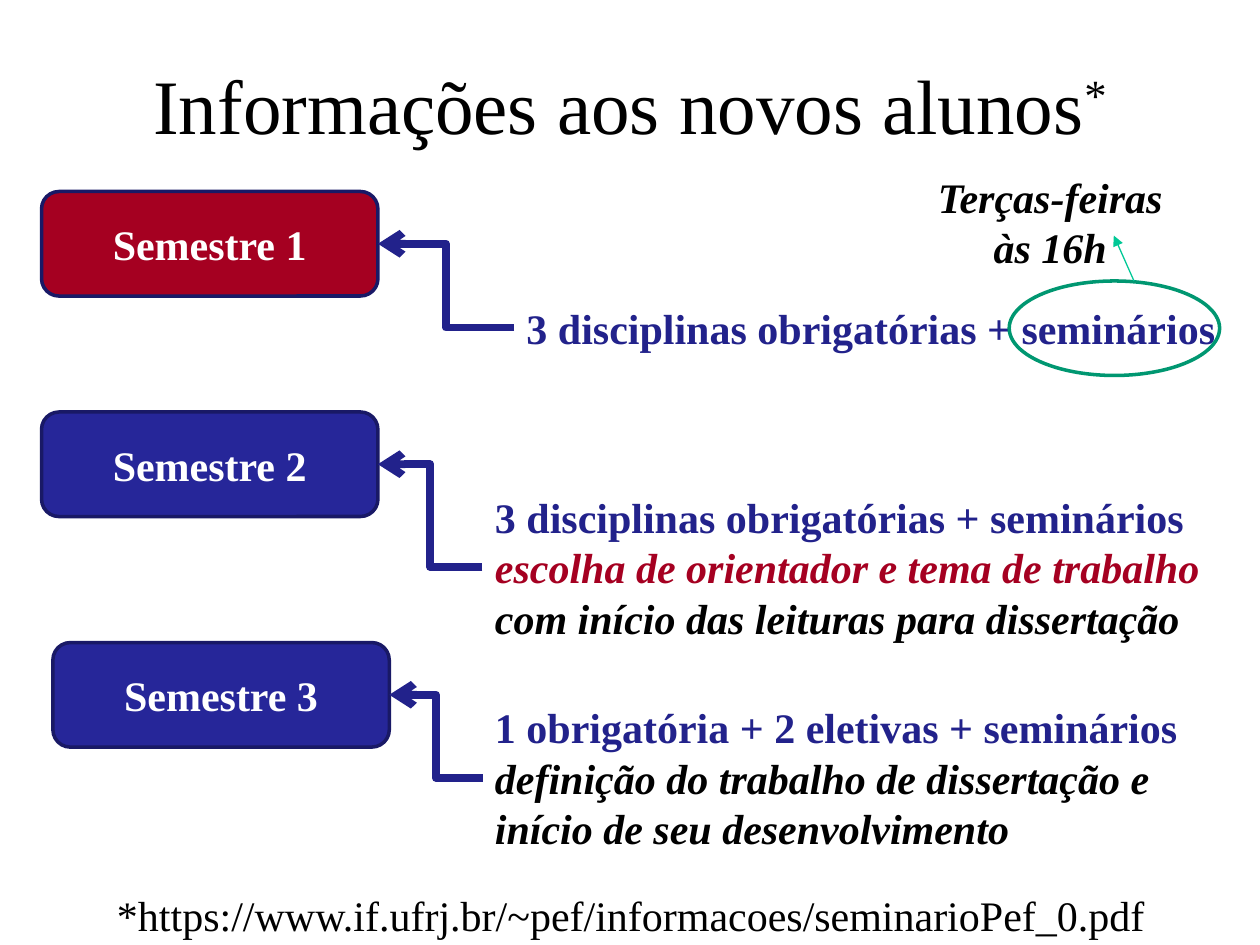
"""Builds the slide on semester requirements for new students."""
from lxml import etree
from pptx import Presentation
from pptx import util as u
from pptx.dml.color import RGBColor
from pptx.enum import shapes, text
from pptx.oxml.ns import qn

PX = 9144
FONT = "Times New Roman"
BLACK = RGBColor(0x00, 0x00, 0x00)
WHITE = RGBColor(0xFF, 0xFF, 0xFF)
RED = RGBColor(0xA5, 0x00, 0x21)
BLUE = RGBColor(0x26, 0x26, 0x99)
NAVY = RGBColor(0x22, 0x22, 0x8B)
BORDER = RGBColor(0x19, 0x19, 0x66)
GREEN = RGBColor(0x00, 0x97, 0x71)
MINT = RGBColor(0x00, 0xC8, 0x96)

PLAIN = {"size": u.Pt(24), "name": FONT, "color": BLACK, "bold": False, "italic": False}
TITLE = PLAIN | {"size": u.Pt(44)}
LABEL = PLAIN | {"color": WHITE, "bold": True}
COURSES = PLAIN | {"color": NAVY, "bold": True}
DETAIL = PLAIN | {"bold": True, "italic": True}
CHOICE = DETAIL | {"color": RED}

HEADING = [[("Informações aos novos alunos", TITLE), ("*", TITLE)]]
SEMESTERS = [
    ("Semestre 1", RED, (33, 152), (408, 235, 583, 50),
     [[("3 disciplinas obrigatórias + seminários", COURSES)]]),
    ("Semestre 2", BLUE, (33, 327), (383, 385, 608, 130),
     [[("3 disciplinas obrigatórias + seminários ", COURSES),
       ("escolha de orientador e tema de trabalho", CHOICE)],
      [("com início das leituras para dissertação", DETAIL)]]),
    ("Semestre 3", BLUE, (42, 510), (383, 552, 608, 131),
     [[("1 obrigatória + 2 eletivas + seminários", COURSES)],
      [("definição do trabalho de dissertação e início de seu desenvolvimento", DETAIL)]]),
]
BUTTON_SIZE = (267, 83)
SCHEDULE = [[("Terças-feiras às 16h", DETAIL)]]
SOURCE = [[("*https://www.if.ufrj.br/~pef/informacoes/seminarioPef_0.pdf", PLAIN)]]


def emu(*lengths):
    return [length * PX for length in lengths]


def write(frame, paragraphs, align=text.PP_ALIGN.LEFT, anchor=text.MSO_ANCHOR.TOP):
    frame.word_wrap = True
    frame.vertical_anchor = anchor
    for index, spans in enumerate(paragraphs):
        para = frame.add_paragraph() if index else frame.paragraphs[0]
        para.alignment = align
        for words, style in spans:
            span = para.add_run()
            span.text = words
            for key, value in style.items():
                if key == "color":
                    span.font.color.rgb = value
                else:
                    setattr(span.font, key, value)


def add_text(page, place, paragraphs, align=text.PP_ALIGN.LEFT):
    box = page.shapes.add_textbox(*emu(*place))
    write(box.text_frame, paragraphs, align)
    box.text_frame.auto_size = text.MSO_AUTO_SIZE.SHAPE_TO_FIT_TEXT
    return box


def add_outlined(page, kind, place, border, fill=None):
    shape = page.shapes.add_shape(kind, *emu(*place))
    shape.shadow.inherit = False
    if fill is None:
        shape.fill.background()
    else:
        shape.fill.solid()
        shape.fill.fore_color.rgb = fill
    shape.line.color.rgb = border
    shape.line.width = u.Pt(2)
    return shape


def add_arrow(page, kind, points, color, width, head):
    arrow = page.shapes.add_connector(kind, *emu(*points))
    arrow.line.color.rgb = color
    arrow.line.width = u.Pt(width)
    etree.SubElement(arrow.line._get_or_add_ln(), qn("a:tailEnd"), type=head)
    etree.SubElement(arrow._element.spPr, qn("a:effectLst"))
    return arrow


def add_semester(page, name, fill, corner, place, paragraphs):
    button = add_outlined(page, shapes.MSO_SHAPE.ROUNDED_RECTANGLE,
                          corner + BUTTON_SIZE, BORDER, fill)
    write(button.text_frame, [[(name, LABEL)]], text.PP_ALIGN.CENTER, text.MSO_ANCHOR.MIDDLE)
    box = add_text(page, place, paragraphs)
    arrow = add_arrow(page, shapes.MSO_CONNECTOR.ELBOW, (0, 0, 0, 0), NAVY, 4.5, "arrow")
    arrow.begin_connect(box, 1)
    arrow.end_connect(button, 3)


def main():
    deck = Presentation()
    deck.slide_width, deck.slide_height = emu(1000, 750)
    page = deck.slides.add_slide(deck.slide_layouts[5])

    title = page.shapes.title
    title.left, title.top, title.width, title.height = emu(75, 41, 850, 125)
    write(title.text_frame, HEADING, text.PP_ALIGN.CENTER)
    title.text_frame.auto_size = text.MSO_AUTO_SIZE.NONE
    asterisk = title.text_frame.paragraphs[0].runs[-1]
    asterisk._r.get_or_add_rPr().set("baseline", "30000")

    for semester in SEMESTERS:
        add_semester(page, *semester)

    add_text(page, (725, 131, 217, 91), SCHEDULE, text.PP_ALIGN.CENTER)
    add_outlined(page, shapes.MSO_SHAPE.OVAL, (801, 223, 167, 75), GREEN)
    add_arrow(page, shapes.MSO_CONNECTOR.STRAIGHT, (900, 223, 884, 187), MINT, 0.75, "triangle")
    add_text(page, (83, 701, 858, 50), SOURCE)

    deck.save("out.pptx")


if __name__ == "__main__":
    main()
